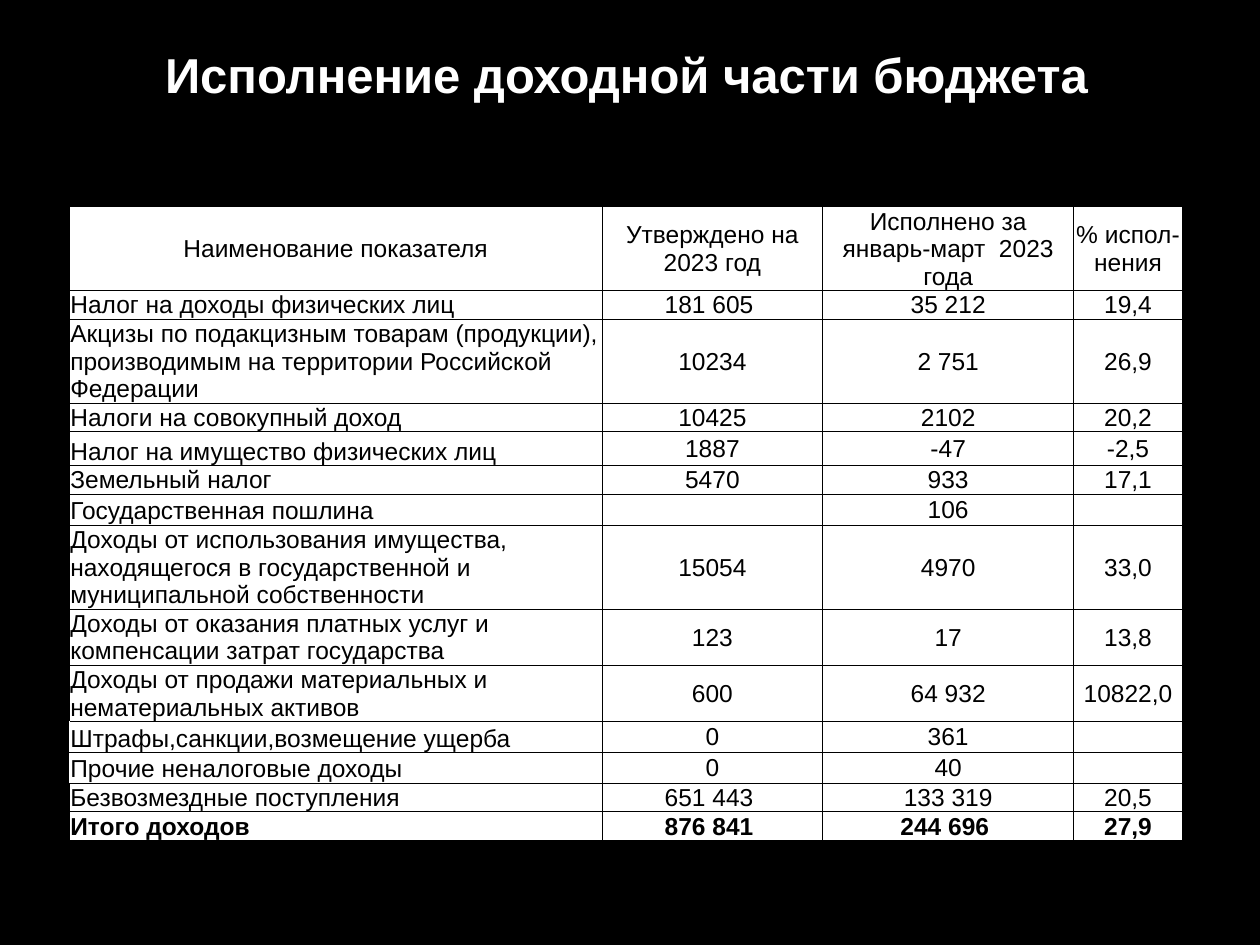
import lxml.etree
import pptx
import pptx.dml.color
import pptx.enum.text
import pptx.oxml.ns
import pptx.util

Pt = pptx.util.Pt
qn = pptx.oxml.ns.qn
ALIGN = pptx.enum.text.PP_ALIGN
ANCHOR = pptx.enum.text.MSO_ANCHOR
BLACK, WHITE = "000000", "FFFFFF"


def rgb(value):
    return pptx.dml.color.RGBColor.from_string(value)


class BudgetSlide:
    """Holds the style and the current slide."""

    font = "Arial"
    title_size = 28
    cell_size = 14
    line_height = 16
    border_width = 0.5

    def __init__(self, deck):
        self.slide = deck.slides.add_slide(deck.slide_layouts[5])
        background = self.slide.background.fill
        background.solid()
        background.fore_color.rgb = rgb(BLACK)

    def format_text(self, paragraph, size, color, bold, align):
        paragraph.alignment = align
        for run in paragraph.runs:
            run.font.name = self.font
            run.font.size = Pt(size)
            run.font.bold = bold
            run.font.color.rgb = rgb(color)
        if not paragraph.runs:
            # Keep empty cells as low as the filled ones
            lxml.etree.SubElement(paragraph._p, qn("a:endParaRPr"), sz=str(size * 100))

    def title(self, text, left, top, width, height):
        heading = self.slide.shapes.title
        heading.left, heading.top = Pt(left), Pt(top)
        heading.width, heading.height = Pt(width), Pt(height)
        frame = heading.text_frame
        frame.text = text
        frame.word_wrap = True
        frame.vertical_anchor = ANCHOR.MIDDLE
        self.format_text(frame.paragraphs[0], self.title_size, WHITE, True, ALIGN.CENTER)

    def borders(self, cell, sides):
        properties = cell._tc.get_or_add_tcPr()
        for position, side in enumerate(sides):
            line = lxml.etree.Element(qn(f"a:ln{side}"), w=str(Pt(self.border_width)))
            fill = lxml.etree.SubElement(line, qn("a:solidFill"))
            lxml.etree.SubElement(fill, qn("a:srgbClr"), val=BLACK)
            properties.insert(position, line)

    def cell(self, cell, text, align, anchor, bold, sides="LRTB"):
        cell.text_frame.text = text
        cell.margin_left = cell.margin_right = cell.margin_top = Pt(0.6)
        cell.margin_bottom = 0
        cell.vertical_anchor = anchor
        cell.fill.solid()
        cell.fill.fore_color.rgb = rgb(WHITE)
        self.borders(cell, sides)
        self.format_text(cell.text_frame.paragraphs[0], self.cell_size, BLACK, bold, align)

    def table(self, rows, widths, left, top):
        height = sum(lines for lines, _ in rows) * self.line_height
        grid = self.slide.shapes.add_table(
            len(rows), len(widths), Pt(left), Pt(top), Pt(sum(widths)), Pt(height)).table
        grid.first_row = grid.horz_banding = False
        for column, width in zip(grid.columns, widths):
            column.width = Pt(width)
        last = len(rows) - 1
        for r, (lines, texts) in enumerate(rows):
            grid.rows[r].height = Pt(lines * self.line_height)
            for c, text in enumerate(texts):
                align, anchor, sides = ALIGN.CENTER, ANCHOR.MIDDLE, "LRTB"
                if c == 0 and r > 0:
                    # The two closing rows are justified, the others sit low
                    closing = r >= last - 1
                    align = ALIGN.JUSTIFY if closing else ALIGN.LEFT
                    anchor = ANCHOR.TOP if closing else ANCHOR.BOTTOM
                    if last - 3 <= r < last - 1:
                        sides = "RTB"
                elif r == last and c < 3:
                    anchor = ANCHOR.TOP
                self.cell(grid.cell(r, c), text, align, anchor, r == last, sides)


# Height in text lines, then the cells of the row
INCOME = [
    (3, ["Наименование показателя", "Утверждено на 2023 год",
         "Исполнено за январь-март  2023 года", "% испол-нения"]),
    (1, ["Налог на доходы физических лиц", "181 605 ", "35 212", "19,4"]),
    (3, ["Акцизы по подакцизным товарам (продукции), производимым на территории "
         "Российской Федерации", "10234", "2 751", "26,9"]),
    (1, ["Налоги на совокупный доход", "10425", "2102", "20,2"]),
    (1.21, ["Налог на имущество физических лиц", "1887", "-47", "-2,5"]),
    (1, ["Земельный налог", "5470", "933", "17,1"]),
    (1, ["Государственная пошлина", "", "106", ""]),
    (3, ["Доходы от использования имущества, находящегося в государственной и "
         "муниципальной собственности", "15054", "4970", "33,0"]),
    (2, ["Доходы от оказания платных услуг и компенсации затрат государства",
         "123", "17", "13,8"]),
    (2, ["Доходы от продажи материальных и нематериальных активов",
         "600", "64 932", "10822,0"]),
    (1, ["Штрафы,санкции,возмещение ущерба", "0", "361", ""]),
    (1, ["Прочие неналоговые доходы", "0", "40", ""]),
    (1, ["Безвозмездные поступления", "651 443 ", "133 319", "20,5"]),
    (1, ["Итого доходов", "876 841 ", "244 696 ", "27,9"]),
]


def main():
    deck = pptx.Presentation()
    deck.slide_width, deck.slide_height = Pt(720), Pt(540)
    budget = BudgetSlide(deck)
    budget.title("Исполнение доходной части бюджета", 34, 16.5, 648, 52)
    budget.table(INCOME, [304.5, 126, 143.5, 62], 39.6, 118)
    deck.save("out.pptx")


if __name__ == "__main__":
    main()
